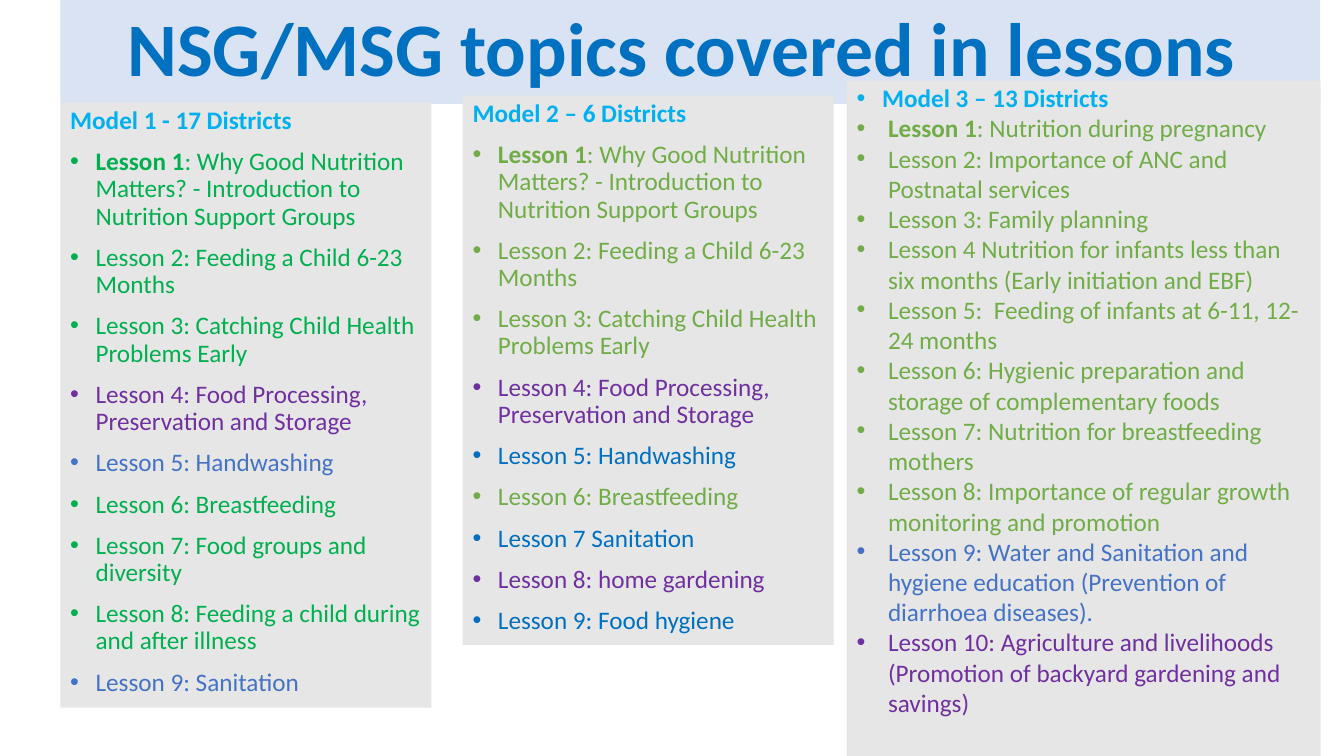
from dataclasses import dataclass

from lxml.etree import SubElement
from pptx import Presentation
from pptx.dml.color import RGBColor as Rgb
from pptx.enum.text import MSO_ANCHOR as Anchor, PP_ALIGN as Align
from pptx.oxml.ns import qn
from pptx.util import Cm, Pt

HUES = {
    "pale": "DAE3F3",
    "grey": "E7E6E6",
    "sky": "00B0F0",
    "blue": "0070C0",
    "steel": "4472C4",
    "green": "00B050",
    "leaf": "70AD47",
    "plum": "7030A0",
}


@dataclass
class Box:
    left: float
    top: float
    width: float
    height: float
    fill: str


@dataclass
class Model:
    box: Box
    head: str
    topics: list[tuple[str, str]]
    dot: bool = False
    hang: float = 0.64
    line: float = 0.9
    gap: float = 10


TITLE = Box(1.52, 0, 31.75, 2.62, "pale")
INTRO = "Lesson 1: Why Good Nutrition Matters? - Introduction to Nutrition Support Groups"
CHILD = "Lesson 2: Feeding a Child 6-23 Months"
HEALTH = "Lesson 3: Catching Child Health Problems Early"
FOOD = "Lesson 4: Food Processing, Preservation and Storage"
WASH = "Lesson 5: Handwashing"
BREAST = "Lesson 6: Breastfeeding"

MODELS = [
    Model(Box(1.52, 2.59, 9.35, 15.24, "grey"), "Model 1 - 17 Districts", [
        (INTRO, "green"),
        (CHILD, "green"),
        (HEALTH, "green"),
        (FOOD, "plum"),
        (WASH, "steel"),
        (BREAST, "green"),
        ("Lesson 7: Food groups and diversity", "green"),
        ("Lesson 8: Feeding a child during and after illness", "green"),
        ("Lesson 9: Sanitation", "steel"),
    ]),
    Model(Box(11.66, 2.41, 9.35, 13.84, "grey"), "Model 2 – 6 Districts", [
        (INTRO, "leaf"),
        (CHILD, "leaf"),
        (HEALTH, "leaf"),
        (FOOD, "plum"),
        (WASH, "blue"),
        (BREAST, "leaf"),
        ("Lesson 7 Sanitation", "blue"),
        ("Lesson 8: home gardening", "plum"),
        ("Lesson 9: Food hygiene", "blue"),
    ]),
    Model(Box(21.34, 2.03, 11.94, 17.4, "grey"), "Model 3 – 13 Districts", [
        ("Lesson 1: Nutrition during pregnancy", "leaf"),
        ("Lesson 2: Importance of ANC and Postnatal services", "leaf"),
        ("Lesson 3: Family planning", "leaf"),
        ("Lesson 4 Nutrition for infants less than six months "
         "(Early initiation and EBF)", "leaf"),
        ("Lesson 5:  Feeding of infants at 6-11, 12-24 months", "leaf"),
        ("Lesson 6: Hygienic preparation and storage of complementary foods", "leaf"),
        ("Lesson 7: Nutrition for breastfeeding mothers", "leaf"),
        ("Lesson 8: Importance of regular growth monitoring and promotion", "leaf"),
        ("Lesson 9: Water and Sanitation and hygiene education "
         "(Prevention of diarrhoea diseases).", "steel"),
        ("Lesson 10: Agriculture and livelihoods "
         "(Promotion of backyard gardening and savings)", "plum"),
    ], dot=True, hang=0.79, line=1, gap=0),
]


def add_box(slide, box: Box, anchor=Anchor.TOP):
    """Add a filled text box and return its text frame."""
    shape = slide.shapes.add_textbox(
        Cm(box.left), Cm(box.top), Cm(box.width), Cm(box.height))
    shape.fill.solid()
    shape.fill.fore_color.rgb = Rgb.from_string(HUES[box.fill])
    frame = shape.text_frame
    frame.word_wrap = True
    frame.vertical_anchor = anchor
    return frame


def add_bullet(para, hang: float) -> None:
    props = para._p.get_or_add_pPr()
    props.set("marL", str(Cm(hang)))
    props.set("indent", str(-Cm(hang)))
    SubElement(props, qn("a:buFont")).set("typeface", "Arial")
    SubElement(props, qn("a:buChar")).set("char", "•")


def write(frame, text: str, *, hue: str, size: float = 18, bold: str = "",
          align=Align.LEFT, line: float = 0.9, gap: float = 0,
          hang: float = 0) -> None:
    """Write one paragraph whose leading part, given by bold, is bold."""
    first = frame.paragraphs[0]
    para = frame.add_paragraph() if first.runs else first
    para.alignment = align
    para.line_spacing = line
    para.space_before = Pt(gap)
    if hang:
        add_bullet(para, hang)
    for part, heavy in ((bold, True), (text.removeprefix(bold), False)):
        if part:
            run = para.add_run()
            run.text = part
            font = run.font
            font.name = "Calibri"
            font.size = Pt(size)
            font.bold = heavy
            font.color.rgb = Rgb.from_string(HUES[hue])


def add_model(slide, model: Model) -> None:
    frame = add_box(slide, model.box)
    write(frame, model.head, bold=model.head, hue="sky", gap=10,
          hang=0.64 if model.dot else 0)
    for rank, (text, hue) in enumerate(model.topics):
        write(frame, text, hue=hue, bold="" if rank else "Lesson 1",
              line=model.line, gap=model.gap, hang=model.hang)


def main() -> None:
    deck = Presentation()
    deck.slide_width, deck.slide_height = Cm(33.87), Cm(19.05)
    slide = deck.slides.add_slide(deck.slide_layouts[6])
    title = "NSG/MSG topics covered in lessons "
    write(add_box(slide, TITLE, Anchor.MIDDLE), title, bold=title,
          hue="blue", size=54, align=Align.CENTER)
    for model in MODELS:
        add_model(slide, model)
    deck.save("out.pptx")


if __name__ == "__main__":
    main()
